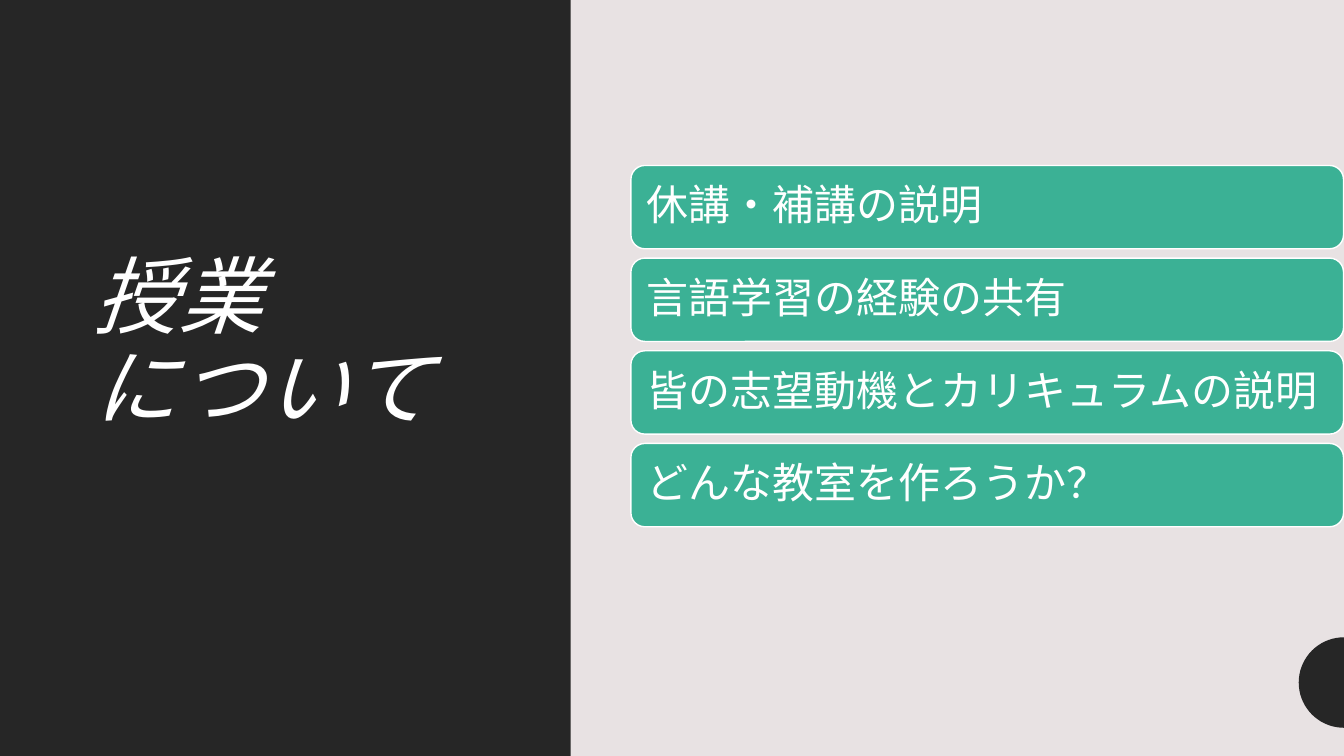
from math import cos, pi, sin

from pptx import Presentation
from pptx.dml.color import RGBColor
from pptx.enum.shapes import MSO_SHAPE
from pptx.enum.text import MSO_ANCHOR, PP_ALIGN
from pptx.util import Cm, Pt

RECTANGLE = MSO_SHAPE.RECTANGLE
ROUNDED = MSO_SHAPE.ROUNDED_RECTANGLE
MIDDLE = MSO_ANCHOR.MIDDLE
LEFT = PP_ALIGN.LEFT

WIDTH, HEIGHT = 33.87, 19.05
DARK, PALE, GREEN, WHITE = "262626", "E8E2E3", "3BB195", "FFFFFF"

TOPICS = [
    "休講・補講の説明",
    "言語学習の経験の共有",
    "皆の志望動機とカリキュラムの説明",
    "どんな教室を作ろうか？",
]
TOPIC_LEFT, TOPIC_TOP = 15.9, 4.17
TOPIC_WIDTH, TOPIC_HEIGHT, TOPIC_PITCH = 17.96, 2.1, 2.335


def color(value):
    return RGBColor.from_string(value)


def paint(shape, fill, line=None):
    shape.shadow.inherit = False
    shape.fill.solid()
    shape.fill.fore_color.rgb = color(fill)
    if line:
        shape.line.color.rgb = color(line)
        shape.line.width = Pt(1)
    else:
        shape.line.fill.background()


def add_box(slide, kind, left, top, width, height, fill, line=None):
    shape = slide.shapes.add_shape(kind, Cm(left), Cm(top), Cm(width), Cm(height))
    paint(shape, fill, line)
    return shape


def write_text(shape, text, *, size, font, italic=False, spacing=0, margin=None):
    """Set one paragraph; a vertical tab in the text is a line break."""
    frame = shape.text_frame
    frame.word_wrap = True
    frame.vertical_anchor = MIDDLE
    if margin is not None:
        frame.margin_left = frame.margin_right = Cm(margin)
        frame.margin_top = frame.margin_bottom = Cm(margin)
    paragraph = frame.paragraphs[0]
    paragraph.text = text
    paragraph.alignment = LEFT
    paragraph.line_spacing = 0.9
    for run in paragraph.runs:
        run.font.size = Pt(size)
        run.font.name = font
        run.font.italic = italic
        run.font.color.rgb = color(WHITE)
        if spacing:
            run.font._element.set("spc", str(spacing * 100))


def add_half_disc(slide, center_x, center_y, radius, steps=36):
    """Draw the left half of a disc."""
    angles = [pi / 2 + pi * step / steps for step in range(steps + 1)]
    points = [
        (Cm(center_x + radius * cos(angle)), Cm(center_y + radius * sin(angle)))
        for angle in angles
    ]
    builder = slide.shapes.build_freeform(*points[0])
    builder.add_line_segments(points[1:], close=True)
    paint(builder.convert_to_shape(), DARK)


def add_title(slide, text):
    title = slide.shapes.add_textbox(Cm(2.11), Cm(2.11), Cm(10.64), Cm(13.21))
    write_text(title, text, size=60, font="Roboto", italic=True, spacing=1)


def add_topics(slide):
    for index, topic in enumerate(TOPICS):
        top = TOPIC_TOP + index * TOPIC_PITCH
        bar = add_box(slide, ROUNDED, TOPIC_LEFT, top, TOPIC_WIDTH, TOPIC_HEIGHT,
                      GREEN, line=WHITE)
        write_text(bar, topic, size=30, font="Lato", margin=0.3)


def main():
    presentation = Presentation()
    presentation.slide_width = Cm(WIDTH)
    presentation.slide_height = Cm(HEIGHT)
    slide = presentation.slides.add_slide(presentation.slide_layouts[6])
    slide.background.fill.solid()
    slide.background.fill.fore_color.rgb = color(PALE)

    add_box(slide, RECTANGLE, 0, 0, 14.38, HEIGHT, DARK)
    add_title(slide, "授業\vについて")
    add_half_disc(slide, WIDTH, 17.2, 1.14)
    add_topics(slide)
    presentation.save("out.pptx")


if __name__ == "__main__":
    main()
